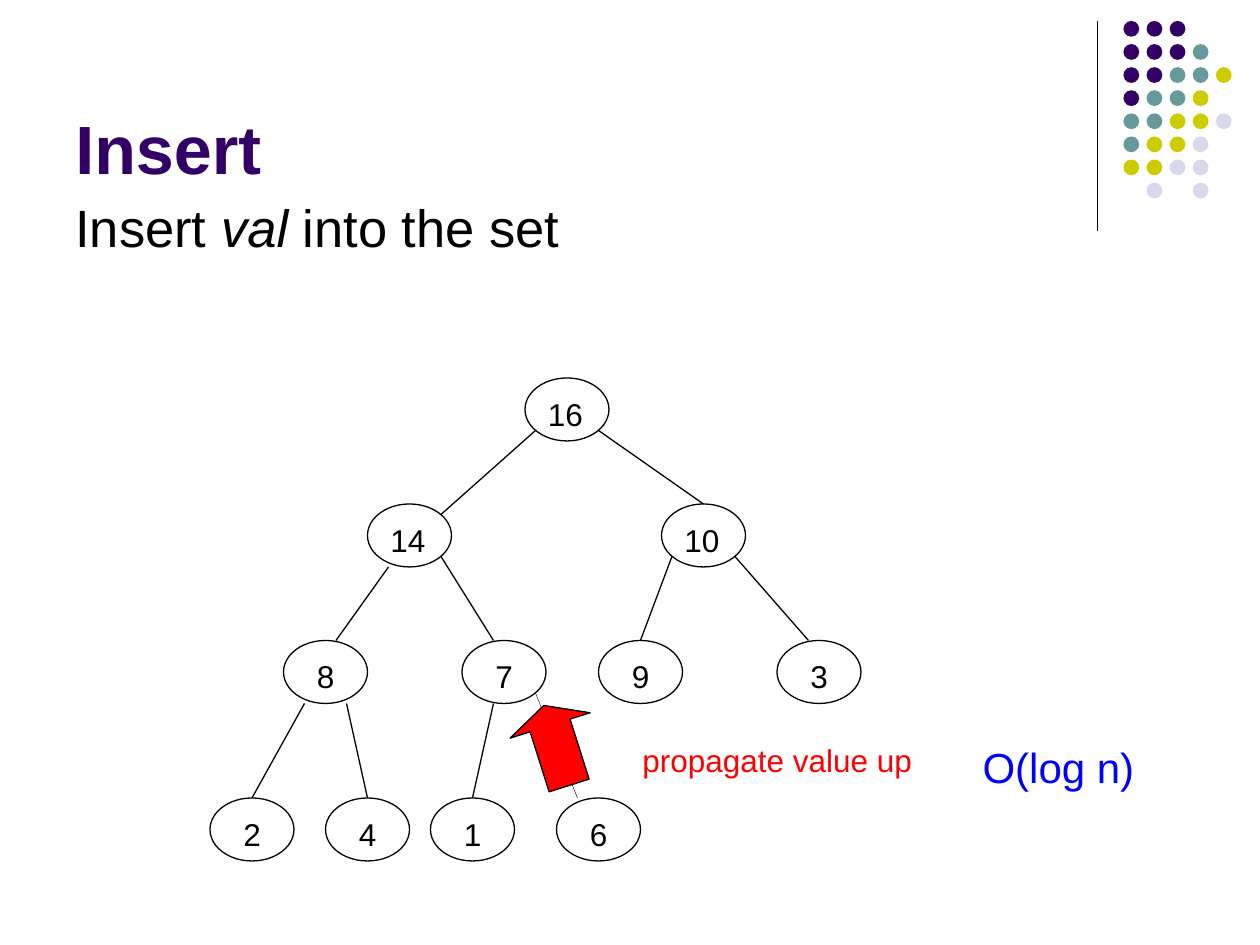
from collections import namedtuple

from lxml.etree import SubElement
from pptx import Presentation
from pptx.dml.color import RGBColor
from pptx.enum.shapes import MSO_CONNECTOR, MSO_SHAPE
from pptx.enum.text import MSO_ANCHOR, MSO_AUTO_SIZE
from pptx.oxml.ns import qn
from pptx.util import Inches, Pt

BLACK = RGBColor(0x00, 0x00, 0x00)
PURPLE = RGBColor(0x33, 0x00, 0x66)
TEAL = RGBColor(0x66, 0x99, 0x99)
OLIVE = RGBColor(0xCC, 0xCC, 0x00)
LAVENDER = RGBColor(0xD8, 0xD8, 0xEC)
RED = RGBColor(0xFF, 0x00, 0x00)
BLUE = RGBColor(0x00, 0x00, 0xFF)

COLUMNS, ROWS = 120, 90
UNIT = Inches(10) // COLUMNS
Box = namedtuple("Box", "left top width height")

DOT_COLOURS = {"P": PURPLE, "T": TEAL, "O": OLIVE, "L": LAVENDER}
DOT_ROWS = ["PPP", "PPPT", "PPTTO", "PTTO", "TTOOL", "TOOL", "OOLL", ".L.L"]

NODE_WIDTH, NODE_HEIGHT = 8, 6
TOP_MIDDLE = (NODE_WIDTH / 2, 0)
NODES = {
    16: (30, 0),
    14: (15, 12), 10: (43, 12),
    8: (7, 25), 7: (24, 25), 9: (37, 25), 3: (54, 25),
    2: (0, 40), 4: (11, 40), 1: (21, 40), 6: (33, 40),
}
EDGES = [
    (16, (1, 5), 14, (7, 1), 0.75),
    (16, (7, 5), 10, TOP_MIDDLE, 0.75),
    (14, (2, 6), 8, (5, 0), 0.75),
    (14, (7, 5), 7, (3, 0), 0.75),
    (10, (1, 5), 9, TOP_MIDDLE, 0.75),
    (10, (7, 5), 3, (3, 0), 0.75),
    (8, (2, 6), 2, TOP_MIDDLE, 0.75),
    (8, (6, 6), 4, TOP_MIDDLE, 0.75),
    (7, (3, 6), 1, TOP_MIDDLE, 0.75),
    (7, (7, 5), 6, (2, 0), 0.25),
]


def grid(*lengths):
    """Turn grid lengths into slide lengths."""
    return [round(length * UNIT) for length in lengths]


def add_shape(shapes, kind, box, fill=None, line=None):
    """Add a preset shape with the given fill and outline."""
    shape = shapes.add_shape(kind, *grid(*box))
    shape.shadow.inherit = False
    if fill is None:
        shape.fill.background()
    else:
        shape.fill.solid()
        shape.fill.fore_color.rgb = fill
    if line is None:
        shape.line.fill.background()
    else:
        shape.line.color.rgb = line
        shape.line.width = Pt(0.75)
    return shape


def add_line(shapes, start, end, width=0.75):
    """Add a plain black straight line."""
    line = shapes.add_connector(MSO_CONNECTOR.STRAIGHT, *grid(*start, *end))
    line.line.color.rgb = BLACK
    line.line.width = Pt(width)
    SubElement(line._element.spPr, qn("a:effectLst"))
    return line


def add_text(shapes, box, spans, size, colour, bold=False, anchor=MSO_ANCHOR.TOP,
             wrap=True, grow=True):
    """Add one paragraph made of (text, italic) spans."""
    frame = shapes.add_textbox(*grid(*box)).text_frame
    frame.word_wrap = wrap
    frame.auto_size = MSO_AUTO_SIZE.SHAPE_TO_FIT_TEXT if grow else MSO_AUTO_SIZE.NONE
    frame.vertical_anchor = anchor
    para = frame.paragraphs[0]
    para.font.name = "Arial"
    para.font.size = Pt(size)
    para.font.bold = bold
    para.font.color.rgb = colour
    for text, italic in spans:
        span = para.add_run()
        span.text = text
        if italic:
            span.font.italic = True


def add_ornament(shapes, box):
    """Draw the rule and the dot pattern in the corner."""
    add_line(shapes, (box.left, box.top), (box.left, box.top + box.height))
    dot, pitch, indent = 1.5, 2.2, 2.5
    for row, letters in enumerate(DOT_ROWS):
        for column, letter in enumerate(letters):
            if letter in DOT_COLOURS:
                place = Box(box.left + indent + column * pitch,
                            box.top + row * pitch, dot, dot)
                add_shape(shapes, MSO_SHAPE.OVAL, place, DOT_COLOURS[letter])


def add_heading(shapes, box):
    """Place the title above the statement line."""
    title = Box(box.left, box.top, 99, 17)
    statement = Box(box.left, box.top + box.height - 9, box.width, 9)
    add_text(shapes, title, [("Insert", False)], 39, PURPLE, True,
             MSO_ANCHOR.BOTTOM, grow=False)
    add_text(shapes, statement,
             [("Insert ", False), ("val", True), (" into the set", False)],
             30, BLACK, grow=False)


def add_node(shapes, value, left, top):
    """Draw a labelled heap node and return its ellipse."""
    group = shapes.add_group_shape()
    ellipse = add_shape(group.shapes, MSO_SHAPE.OVAL,
                        Box(left, top, NODE_WIDTH, NODE_HEIGHT), line=BLACK)
    inset = 1 if value > 9 else 2
    add_text(group.shapes, Box(left + inset, top + 1, 7, 4.8),
             [(str(value), False)], 18, BLACK)
    return ellipse


def add_heap(shapes, box):
    """Draw the heap with its edges and the upward arrow."""
    places = {value: (box.left + left, box.top + top)
              for value, (left, top) in NODES.items()}
    ellipses = {value: add_node(shapes, value, *place)
                for value, place in places.items()}
    for parent, leave, child, arrive, width in EDGES:
        start = [a + b for a, b in zip(places[parent], leave)]
        end = [a + b for a, b in zip(places[child], arrive)]
        edge = add_line(shapes, start, end, width)
        if arrive == TOP_MIDDLE:
            edge.end_connect(ellipses[child], 0)
    arrow = add_shape(shapes, MSO_SHAPE.UP_ARROW,
                      Box(box.left + 29, box.top + 31, 8, 8), RED, BLACK)
    arrow.adjustments[0] = 0.5
    arrow.adjustments[1] = 0.25
    arrow.rotation = 342.4


def add_captions(shapes, box):
    """Place the step caption and its cost side by side."""
    add_text(shapes, Box(box.left, box.top, 33, 4.8),
             [("propagate value up", False)], 18, RED)
    add_text(shapes, Box(box.left + box.width - 17, box.top, 17, box.height),
             [("O(log n)", False)], 24, BLUE, wrap=False)


def main():
    """Build and save the deck."""
    deck = Presentation()
    deck.slide_width, deck.slide_height = grid(COLUMNS, ROWS)
    shapes = deck.slides.add_slide(deck.slide_layouts[6]).shapes
    add_ornament(shapes, Box(104.5, 2, 13, 20))
    add_heading(shapes, Box(6, 1.5, 108, 25.5))
    add_heap(shapes, Box(20, 36, 62, 46))
    add_captions(shapes, Box(60, 70, 49.4, 6))
    deck.save("out.pptx")


if __name__ == "__main__":
    main()
